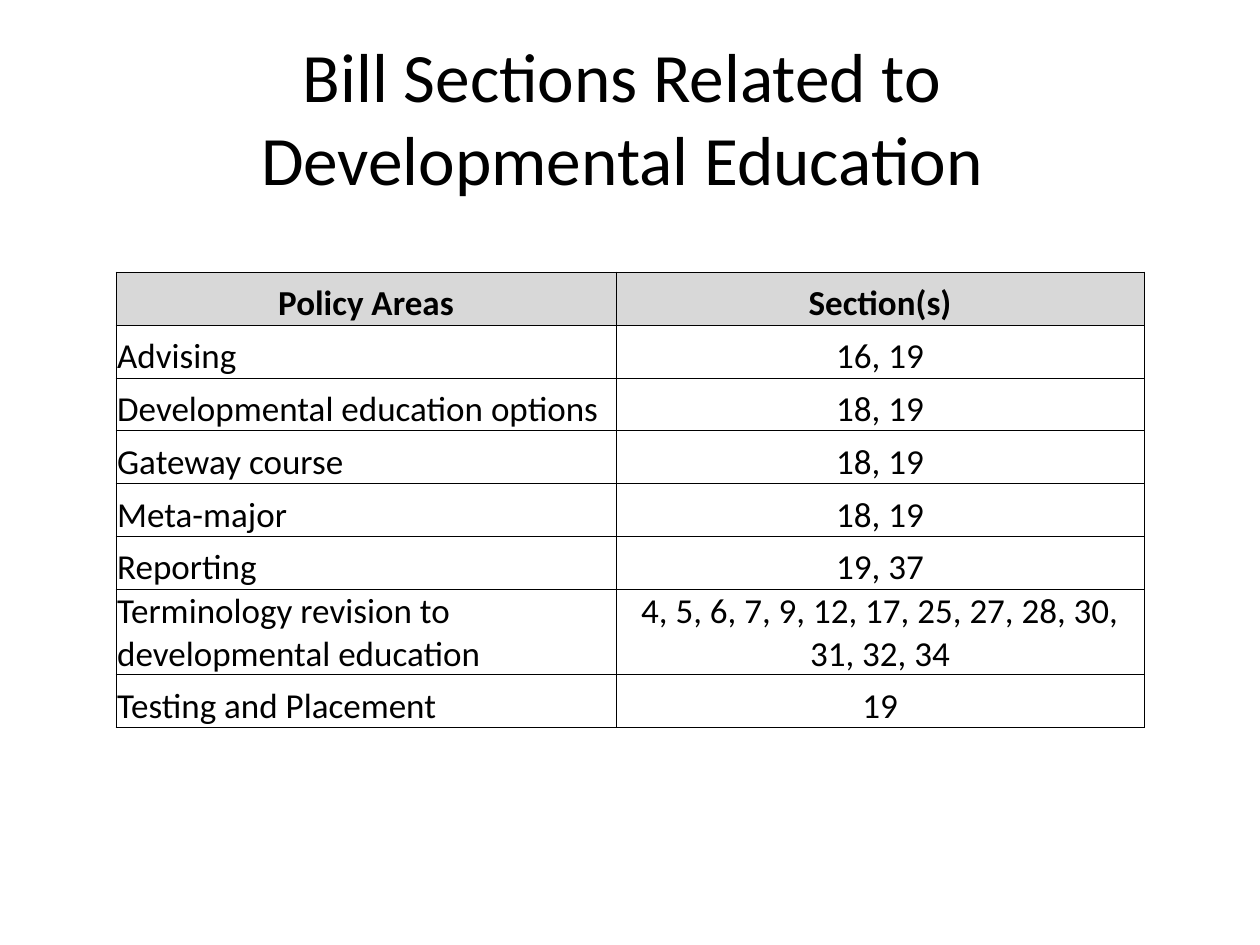
from lxml import etree
from pptx import Presentation
from pptx.dml.color import RGBColor
from pptx.enum.text import MSO_ANCHOR, PP_ALIGN
from pptx.oxml.ns import qn
from pptx.util import Inches, Pt

BLACK = RGBColor(0x00, 0x00, 0x00)
GRAY = RGBColor(0xD8, 0xD8, 0xD8)
FONT = "Calibri"
ROWS = [
    ("Policy Areas", "Section(s)"),
    ("Advising", "16, 19"),
    ("Developmental education options", "18, 19"),
    ("Gateway course", "18, 19"),
    ("Meta-major", "18, 19"),
    ("Reporting", "19, 37"),
    ("Terminology revision to developmental education",
     "4, 5, 6, 7, 9, 12, 17, 25, 27, 28, 30, 31, 32, 34"),
    ("Testing and Placement", "19"),
]
COL_WIDTHS = (3.97, 4.19)
ROW_HEIGHT = 0.42


def style_paragraph(p, size, align, bold=False):
    p.alignment = align
    p.font.name = FONT
    p.font.size = Pt(size)
    p.font.bold = bold
    p.font.color.rgb = BLACK


def add_borders(cell):
    tc_pr = cell._tc.get_or_add_tcPr()
    for side in ("a:lnL", "a:lnR", "a:lnT", "a:lnB"):
        ln = etree.SubElement(tc_pr, qn(side), w=str(Pt(0.5)))
        fill = etree.SubElement(ln, qn("a:solidFill"))
        etree.SubElement(fill, qn("a:srgbClr"), val=str(BLACK))


prs = Presentation()
prs.slide_width, prs.slide_height = Inches(10), Inches(7.5)
s = prs.slides.add_slide(prs.slide_layouts[6])

# Title
title = s.shapes.add_textbox(Inches(0.5), Inches(0.3), Inches(9), Inches(1.25))
tf = title.text_frame
tf.word_wrap = True
tf.vertical_anchor = MSO_ANCHOR.MIDDLE
tf.text = "Bill Sections Related to \vDevelopmental Education "
style_paragraph(tf.paragraphs[0], 39.6, PP_ALIGN.CENTER)

# Policy table
table = s.shapes.add_table(
    len(ROWS), len(COL_WIDTHS), Inches(0.92), Inches(2.16),
    Inches(sum(COL_WIDTHS)), Inches(ROW_HEIGHT * len(ROWS))).table
for column, width in zip(table.columns, COL_WIDTHS):
    column.width = Inches(width)

for i, row in enumerate(ROWS):
    table.rows[i].height = Inches(ROW_HEIGHT)
    is_header = i == 0
    for j, text in enumerate(row):
        cell = table.cell(i, j)
        cell.text = text
        cell.vertical_anchor = MSO_ANCHOR.BOTTOM
        cell.margin_left = cell.margin_right = cell.margin_top = Inches(0.01)
        cell.margin_bottom = 0
        add_borders(cell)
        if is_header:
            cell.fill.solid()
            cell.fill.fore_color.rgb = GRAY
        else:
            cell.fill.background()
        align = PP_ALIGN.CENTER if is_header or j == 1 else PP_ALIGN.LEFT
        style_paragraph(cell.text_frame.paragraphs[0], 20, align, is_header)

prs.save("out.pptx")
